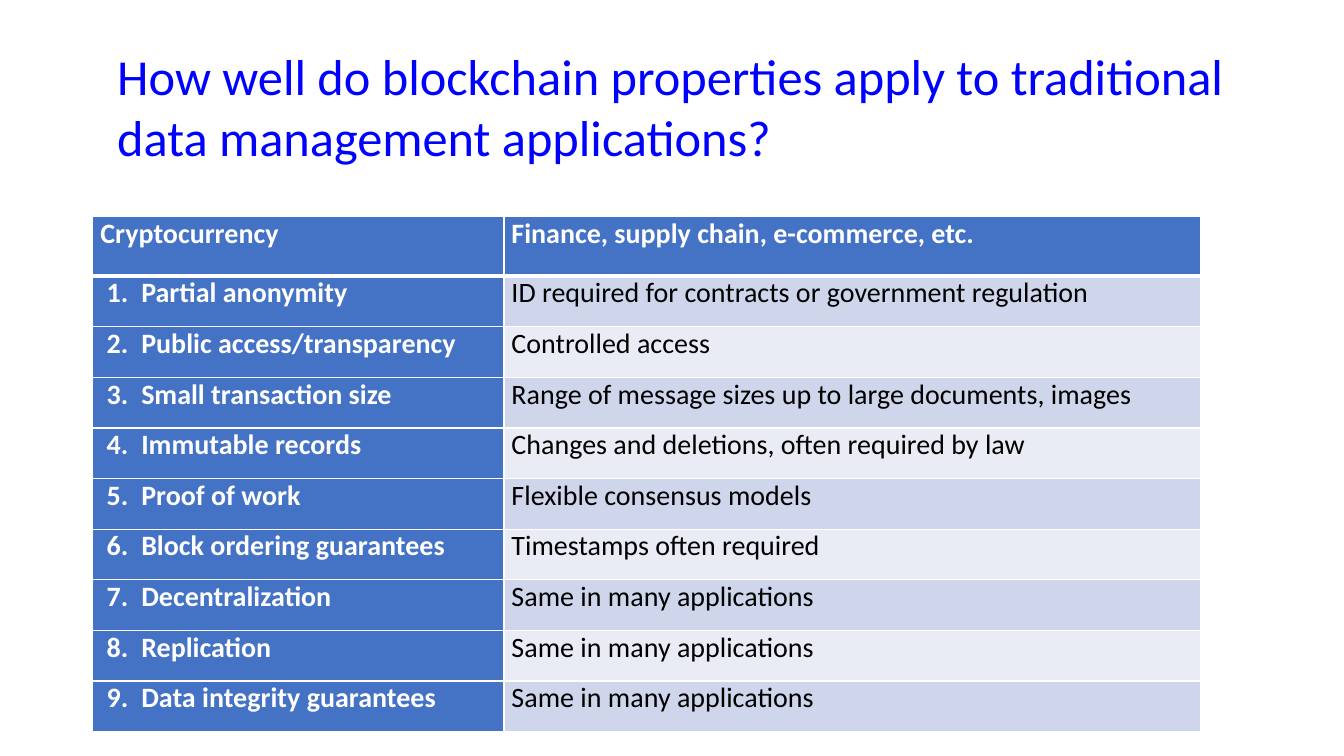
from lxml.etree import SubElement
from pptx import Presentation
from pptx.dml.color import RGBColor as RGB
from pptx.enum.text import MSO_ANCHOR as ANCHOR, MSO_AUTO_SIZE as AUTO, PP_ALIGN as ALIGN
from pptx.oxml.ns import qn
from pptx.util import Cm, Pt

FONT = "Calibri"
COLORS = {"title": "0000FF", "accent": "4472C4", "odd": "CFD5EA",
          "even": "E9EBF5", "white": "FFFFFF", "black": "000000"}
TITLE = "How well do blockchain properties apply to traditional data management applications?"
HEADER = ("Cryptocurrency", "Finance, supply chain, e-commerce, etc.")
COMPARISONS = [
    ("Partial anonymity", "ID required for contracts or government regulation"),
    ("Public access/transparency", "Controlled access"),
    ("Small transaction size", "Range of message sizes up to large documents, images"),
    ("Immutable records", "Changes and deletions, often required by law"),
    ("Proof of work", "Flexible consensus models"),
    ("Block ordering guarantees", "Timestamps often required"),
    ("Decentralization", "Same in many applications"),
    ("Replication", "Same in many applications"),
    ("Data integrity guarantees", "Same in many applications"),
]


def style_text(p, size, color, bold=False):
    for r in p.runs:
        r.font.name, r.font.size, r.font.bold = FONT, Pt(size), bold
        r.font.color.rgb = RGB.from_string(COLORS[color])


def set_borders(cell, widths):
    """Draw white borders; widths gives points for each side."""
    tcPr = cell._tc.get_or_add_tcPr()
    for i, (side, width) in enumerate(widths.items()):
        ln = SubElement(tcPr, qn(f"a:ln{side}"), w=str(Pt(width)))
        fill = SubElement(ln, qn("a:solidFill"))
        SubElement(fill, qn("a:srgbClr"), val=COLORS["white"])
        tcPr.insert(i, ln)  # borders come before the fill


def fill_cell(cell, text, fill, color, bold, widths):
    cell.margin_left = cell.margin_right = Cm(0.19)
    cell.margin_top = cell.margin_bottom = 0
    cell.vertical_anchor = ANCHOR.TOP
    cell.fill.solid()
    cell.fill.fore_color.rgb = RGB.from_string(COLORS[fill])
    p = cell.text_frame.paragraphs[0]
    p.text = text
    style_text(p, 20, color, bold)
    set_borders(cell, widths)
    return p


def add_title(slide, left, top, width, height):
    sp = slide.shapes.title
    sp.left, sp.top, sp.width, sp.height = left, top, width, height
    tf = sp.text_frame
    tf.text = TITLE
    tf.word_wrap = True
    tf.auto_size = AUTO.SHAPE_TO_FIT_TEXT
    tf.vertical_anchor = ANCHOR.TOP
    p = tf.paragraphs[0]
    p.alignment, p.line_spacing = ALIGN.LEFT, 1.0
    style_text(p, 36, "title")


def add_comparison(slide, left, top, width, height):
    rows = len(COMPARISONS) + 1
    table = slide.shapes.add_table(rows, 2, left, top, width, height).table
    table.columns[0].width = Cm(10.36)
    table.columns[1].width = width - Cm(10.36)
    header_height = Cm(1.5)
    for i, row in enumerate(table.rows):
        row.height = (height - header_height) // (rows - 1) if i else header_height

    # Header row with a thick rule below
    for cell, text in zip(table.rows[0].cells, HEADER):
        fill_cell(cell, text, "accent", "white", True, {"L": 1, "R": 1, "T": 1, "B": 3})

    # Numbered properties and their counterparts
    for n, (prop, practice) in enumerate(COMPARISONS, 1):
        widths = {"L": 1, "R": 1, "T": 3 if n == 1 else 1, "B": 1}
        p = fill_cell(table.cell(n, 0), f"{n}.\t{prop}", "accent", "white", True, widths)
        pPr = p._p.get_or_add_pPr()
        pPr.set("marL", str(Cm(1.03)))
        pPr.set("indent", str(-Cm(0.87)))
        fill_cell(table.cell(n, 1), practice, "odd" if n % 2 else "even", "black", False, widths)


def main():
    prs = Presentation()
    prs.slide_width, prs.slide_height = Cm(33.87), Cm(19.05)
    slide = prs.slides.add_slide(prs.slide_layouts[5])
    add_title(slide, Cm(2.7), Cm(1.02), Cm(29.67), Cm(3.33))
    add_comparison(slide, Cm(2.34), Cm(5.46), Cm(27.91), Cm(12.98))
    prs.save("out.pptx")


if __name__ == "__main__":
    main()
